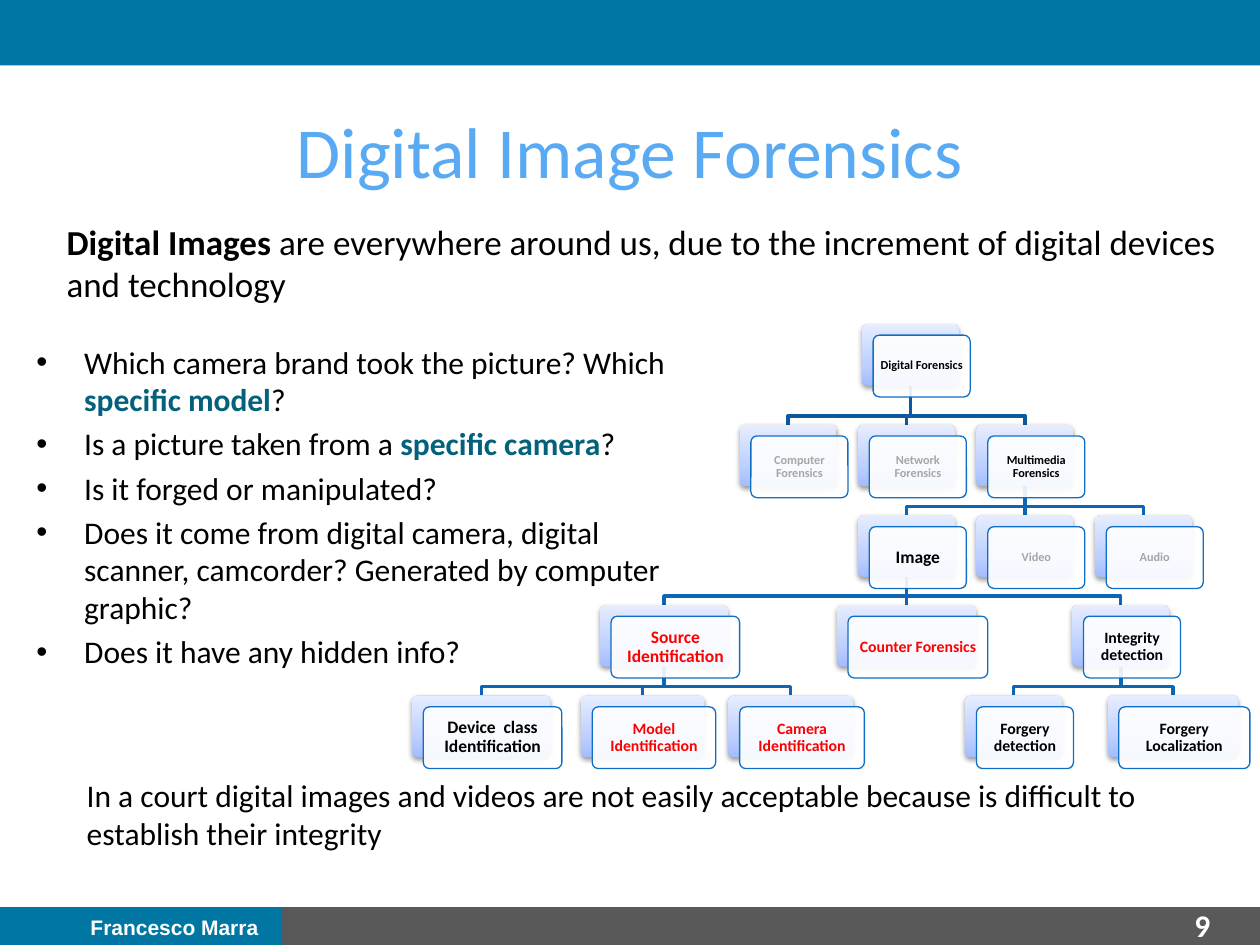
from collections import namedtuple

from lxml.etree import SubElement
from pptx import Presentation
from pptx.dml.color import RGBColor
from pptx.enum.shapes import MSO_CONNECTOR as Connector, MSO_SHAPE as Shape
from pptx.enum.text import MSO_ANCHOR as Anchor, PP_ALIGN as Align
from pptx.oxml.ns import qn
from pptx.util import Inches, Pt

WIDTH, HEIGHT = 10, 7.5
BLUE = RGBColor(0x00, 0x76, 0xA3)
GRAY = RGBColor(0x59, 0x59, 0x59)
SKY = RGBColor(0x59, 0xAA, 0xF2)
TEAL = RGBColor(0x04, 0x61, 0x7B)
BLACK = RGBColor(0, 0, 0)
WHITE = RGBColor(0xFF, 0xFF, 0xFF)
RED = RGBColor(0xFF, 0, 0)
FADED = RGBColor(0xA6, 0xA6, 0xA6)
OUTLINE = RGBColor(0x0F, 0x6F, 0xC6)
ROOT_LINK = RGBColor(0x0C, 0x59, 0x9F)
LINK = RGBColor(0x0E, 0x65, 0xB4)
GRADIENT = ((0, RGBColor(0xA3, 0xBD, 0xFF)), (35, RGBColor(0xBE, 0xD0, 0xFF)),
            (100, RGBColor(0xE6, 0xED, 0xFF)))

ROW_TOPS = [2.57, 3.37, 4.09, 4.8, 5.52]
COLUMNS = [5.87 + 0.94 * column for column in range(4)]
CARD_WIDTH, CARD_HEIGHT, CARD_OFFSET = 0.77, 0.49, 0.09
ELBOW_RISE = 0.07

Node = namedtuple("Node", "text row left width size color parent")
ROOT, MULTIMEDIA, IMAGE = "Digital Forensics", "Multimedia Forensics", "Image"
SOURCE, INTEGRITY = "Source Identification", "Integrity detection"
NODES = [
    Node(ROOT, 0, 6.84, CARD_WIDTH, 7, BLACK, None),
    Node("Computer Forensics", 1, COLUMNS[0], CARD_WIDTH, 7, FADED, ROOT),
    Node("Network Forensics", 1, COLUMNS[1], CARD_WIDTH, 7, FADED, ROOT),
    Node(MULTIMEDIA, 1, COLUMNS[2], CARD_WIDTH, 7, BLACK, ROOT),
    Node(IMAGE, 2, COLUMNS[1], CARD_WIDTH, 10, BLACK, MULTIMEDIA),
    Node("Video", 2, COLUMNS[2], CARD_WIDTH, 7, FADED, MULTIMEDIA),
    Node("Audio", 2, COLUMNS[3], CARD_WIDTH, 7, FADED, MULTIMEDIA),
    Node(SOURCE, 3, 4.76, 1.02, 10, RED, IMAGE),
    Node("Counter Forensics", 3, 6.64, 1.11, 9, RED, IMAGE),
    Node(INTEGRITY, 3, 8.51, CARD_WIDTH, 9, BLACK, IMAGE),
    Node("Device  class Identification", 4, 3.27, 1.1, 10, BLACK, SOURCE),
    Node("Model Identification", 4, 4.61, 0.98, 9, RED, SOURCE),
    Node("Camera Identification", 4, 5.78, 0.99, 9, RED, SOURCE),
    Node("Forgery detection", 4, 7.66, CARD_WIDTH, 9, BLACK, INTEGRITY),
    Node("Forgery Localization", 4, 8.79, 1.04, 9, BLACK, INTEGRITY),
]
QUESTIONS = [
    [("Which camera brand took the picture? Which ", False), ("specific model", True), ("?", False)],
    [("Is a picture taken from a ", False), ("specific camera", True), ("?", False)],
    [("Is it forged or manipulated?", False)],
    [("Does it come from digital camera, digital scanner, camcorder? "
      "Generated by computer graphic?", False)],
    [("Does it have any hidden info?", False)],
]


def add_box(slide, kind, left, top, width, height):
    """Add a preset shape without outline or shadow."""
    shape = slide.shapes.add_shape(kind, *map(Inches, (left, top, width, height)))
    shape.shadow.inherit = False
    shape.line.fill.background()
    return shape


def add_band(slide, left, top, width, height, color):
    """Add a solid band."""
    band = add_box(slide, Shape.RECTANGLE, left, top, width, height)
    band.fill.solid()
    band.fill.fore_color.rgb = color


def style_font(paragraph, size, color, bold=None, name="Calibri"):
    """Set the font of a whole paragraph."""
    font = paragraph.font
    font.size, font.name, font.bold = Pt(size), name, bold
    font.color.rgb = color


def add_text(slide, left, top, width, height, text, size, color, bold=None, name="Calibri"):
    """Add a wrapped text box and return its frame."""
    frame = slide.shapes.add_textbox(*map(Inches, (left, top, width, height))).text_frame
    frame.word_wrap = True
    paragraph = frame.paragraphs[0]
    paragraph.text = text
    style_font(paragraph, size, color, bold, name)
    return frame


def add_questions(slide):
    """Add the bulleted questions with highlighted terms."""
    frame = add_text(slide, 0.19, 2.67, 5.2, 4.8, "", 18, BLACK)
    for index, runs in enumerate(QUESTIONS):
        paragraph = frame.add_paragraph() if index else frame.paragraphs[0]
        properties = paragraph._p.get_or_add_pPr()
        properties.set("marL", str(Inches(0.38)))
        properties.set("indent", str(-Inches(0.38)))
        if index:
            paragraph.space_before = Pt(3.6)
        for child in properties.findall(qn("a:defRPr")):
            properties.remove(child)
        SubElement(properties, qn("a:buFont")).set("typeface", "Arial")
        SubElement(properties, qn("a:buChar")).set("char", "•")
        style_font(paragraph, 18, BLACK)
        for text, highlighted in runs:
            run = paragraph.add_run()
            run.text = text
            if highlighted:
                run.font.bold = True
                run.font.color.rgb = TEAL


def add_color(parent, color, alpha=None):
    """Append an RGB colour element with optional opacity in percent."""
    element = SubElement(parent, qn("a:srgbClr"))
    element.set("val", str(color))
    if alpha is not None:
        SubElement(element, qn("a:alpha")).set("val", str(alpha * 1000))


def add_backing(slide, node):
    """Add the shaded card behind a node."""
    card = add_box(slide, Shape.ROUNDED_RECTANGLE, node.left, ROW_TOPS[node.row],
                   node.width, CARD_HEIGHT)
    card.adjustments[0] = 0.1
    card.fill.gradient()
    card.fill.gradient_angle = 90
    properties = card._element.spPr
    stops = properties.find(".//" + qn("a:gsLst"))
    for stop in list(stops):
        stops.remove(stop)
    for position, color in GRADIENT:
        stop = SubElement(stops, qn("a:gs"))
        stop.set("pos", str(position * 1000))
        add_color(stop, color)
    shadow = SubElement(properties.find(qn("a:effectLst")), qn("a:outerShdw"))
    for key, value in (("blurRad", Pt(3.1)), ("dist", Pt(1.6)), ("dir", 5400000), ("rotWithShape", 0)):
        shadow.set(key, str(value))
    add_color(shadow, BLACK, 38)


def add_label(slide, node):
    """Add the outlined, translucent front card with its label."""
    card = add_box(slide, Shape.ROUNDED_RECTANGLE, node.left + CARD_OFFSET,
                   ROW_TOPS[node.row] + CARD_OFFSET, node.width, CARD_HEIGHT)
    card.adjustments[0] = 0.1
    card.fill.solid()
    card.fill.fore_color.rgb = WHITE
    color = card._element.spPr.find(qn("a:solidFill")).find(qn("a:srgbClr"))
    SubElement(color, qn("a:alpha")).set("val", "90000")
    card.line.color.rgb = OUTLINE
    card.line.width = Pt(0.75)
    frame = card.text_frame
    frame.word_wrap = True
    frame.vertical_anchor = Anchor.MIDDLE
    inset = Inches(0.03 if node.size < 9 else 0.04)
    frame.margin_left = frame.margin_right = frame.margin_top = frame.margin_bottom = inset
    paragraph = frame.paragraphs[0]
    paragraph.text = node.text
    paragraph.alignment = Align.CENTER
    paragraph.line_spacing = 0.9
    style_font(paragraph, node.size, node.color, True)


def add_link(slide, parent, child):
    """Link a parent card to a child card, with an elbow unless they are aligned."""
    start, end = (Inches(node.left + node.width / 2) for node in (parent, child))
    top, bottom = Inches(ROW_TOPS[parent.row] + CARD_HEIGHT), Inches(ROW_TOPS[child.row])
    if abs(start - end) < Inches(0.02):
        link = slide.shapes.add_connector(Connector.STRAIGHT, start, top, start, bottom)
        SubElement(link._element.spPr, qn("a:effectLst"))
    else:
        bend = bottom - Inches(ELBOW_RISE)
        builder = slide.shapes.build_freeform(start, top)
        builder.add_line_segments([(start, bend), (end, bend), (end, bottom)], close=False)
        link = builder.convert_to_shape()
        link.shadow.inherit = False
        link.fill.background()
    link.line.color.rgb = LINK if parent.parent else ROOT_LINK
    link.line.width = Pt(2)


def add_tree(slide):
    """Draw the forensics hierarchy, links behind cards."""
    by_text = {node.text: node for node in NODES}
    for node in NODES:
        if node.parent:
            add_link(slide, by_text[node.parent], node)
    for node in NODES:
        add_backing(slide, node)
        add_label(slide, node)


def main():
    """Build and save the slide."""
    presentation = Presentation()
    presentation.slide_width, presentation.slide_height = Inches(WIDTH), Inches(HEIGHT)
    slide = presentation.slides.add_slide(presentation.slide_layouts[6])
    add_band(slide, 0.04, 0.96 * HEIGHT, WIDTH - 0.04, 0.04 * HEIGHT, GRAY)
    add_band(slide, 0, 0, WIDTH, 0.52, BLUE)
    add_band(slide, 0, 0.96 * HEIGHT, 2.24, 0.04 * HEIGHT, BLUE)
    add_text(slide, 0.62, 7.21, 1.86, 0.3, "Francesco Marra", 12, WHITE, True, "Arial")
    add_text(slide, 9.38, 7.14, 0.62, 0.36, "9", 18, WHITE, True)
    title = add_text(slide, 0, 0.79, WIDTH, 0.79, "Digital Image Forensics", 41, SKY)
    title.vertical_anchor = Anchor.MIDDLE
    title.paragraphs[0].alignment = Align.CENTER
    add_questions(slide)
    intro = add_text(slide, 0.43, 1.7, 9.37, 0.77, "Digital Images ", 20, BLACK).paragraphs[0]
    intro.runs[0].font.bold = True
    intro.add_run().text = ("are everywhere around us, due to the increment of "
                            "digital devices and technology")
    add_text(slide, 0.59, 6.11, 8.66, 0.71, "In a court digital images and videos are not easily "
             "acceptable because is difficult to establish their integrity", 18, BLACK)
    add_tree(slide)
    presentation.save("out.pptx")


if __name__ == "__main__":
    main()
